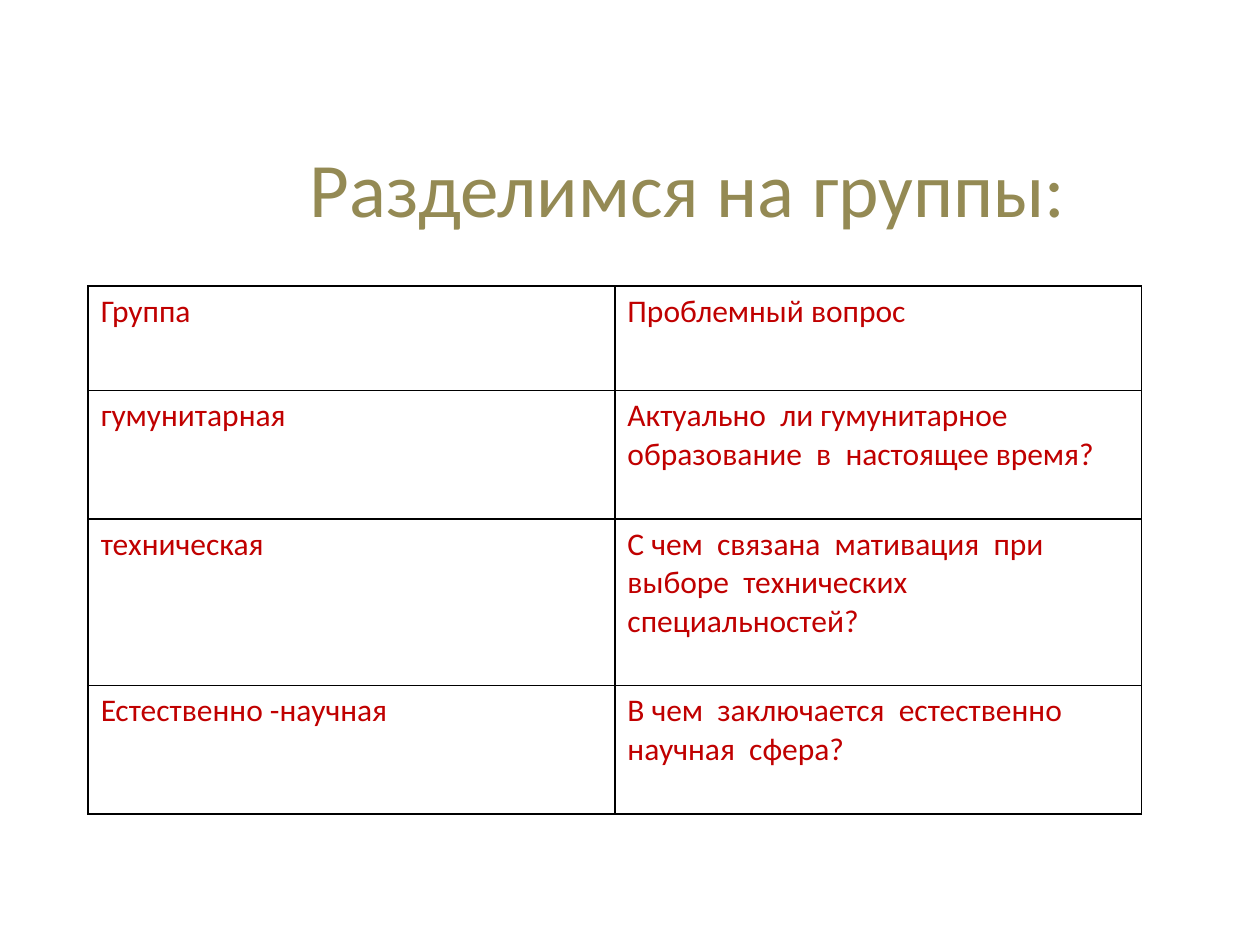
from dataclasses import dataclass

from lxml.etree import SubElement
from pptx import Presentation
from pptx.dml.color import RGBColor
from pptx.enum.text import MSO_ANCHOR, PP_ALIGN
from pptx.oxml.ns import qn
from pptx.util import Inches, Pt


@dataclass(frozen=True)
class Theme:
    font: str = "Calibri"
    title_color: str = "948A54"
    cell_color: str = "C00000"
    border_color: str = "000000"
    title_size: int = 44
    cell_size: int = 18
    border_width: int = 1


THEME = Theme()
PAGE_WIDTH, PAGE_HEIGHT = 10, 7.5
TITLE_BOX = (0.92, 0.86, 9.08, 1.25)
TABLE_BOX = (0.7, 2.27, 8.36, 4.19)
ROW_HEIGHTS = (0.83, 1.02, 1.32, 1.02)
GROUPS = (
    ("Группа", "Проблемный вопрос"),
    ("гумунитарная",
     "Актуально  ли гумунитарное  образование  в  настоящее время?"),
    ("техническая",
     "С чем  связана  мативация  при  выборе  технических  специальностей?"),
    ("Естественно -научная",
     "В чем  заключается  естественно  научная  сфера?"),
)


def add_span(para, text, size, color):
    span = para.add_run()
    span.text = text
    span.font.name = THEME.font
    span.font.size = Pt(size)
    span.font.color.rgb = RGBColor.from_string(color)


def set_borders(cell):
    properties = cell._tc.get_or_add_tcPr()
    for position, side in enumerate(("a:lnL", "a:lnR", "a:lnT", "a:lnB")):
        line = SubElement(properties, qn(side), w=str(Pt(THEME.border_width)))
        fill = SubElement(line, qn("a:solidFill"))
        SubElement(fill, qn("a:srgbClr"), val=THEME.border_color)
        # Borders come before the fill in the cell properties
        properties.insert(position, line)


def add_title(page, area):
    box = page.shapes.add_textbox(*map(Inches, area))
    frame = box.text_frame
    frame.word_wrap = True
    frame.vertical_anchor = MSO_ANCHOR.MIDDLE
    para = frame.paragraphs[0]
    para.alignment = PP_ALIGN.CENTER
    add_span(para, "Разделимся на группы:", THEME.title_size, THEME.title_color)


def add_groups_table(page, area):
    box = page.shapes.add_table(len(GROUPS), len(GROUPS[0]), *map(Inches, area))
    table = box.table
    table.first_row = False
    table.horz_banding = False
    for column in table.columns:
        column.width = Inches(area[2] / len(GROUPS[0]))
    for row, height, texts in zip(table.rows, ROW_HEIGHTS, GROUPS):
        row.height = Inches(height)
        for cell, text in zip(row.cells, texts):
            cell.fill.background()
            set_borders(cell)
            para = cell.text_frame.paragraphs[0]
            add_span(para, text, THEME.cell_size, THEME.cell_color)


def main():
    deck = Presentation()
    deck.slide_width = Inches(PAGE_WIDTH)
    deck.slide_height = Inches(PAGE_HEIGHT)
    page = deck.slides.add_slide(deck.slide_layouts[6])

    # Heading
    add_title(page, TITLE_BOX)
    # Groups and their questions
    add_groups_table(page, TABLE_BOX)

    deck.save("out.pptx")


if __name__ == "__main__":
    main()
